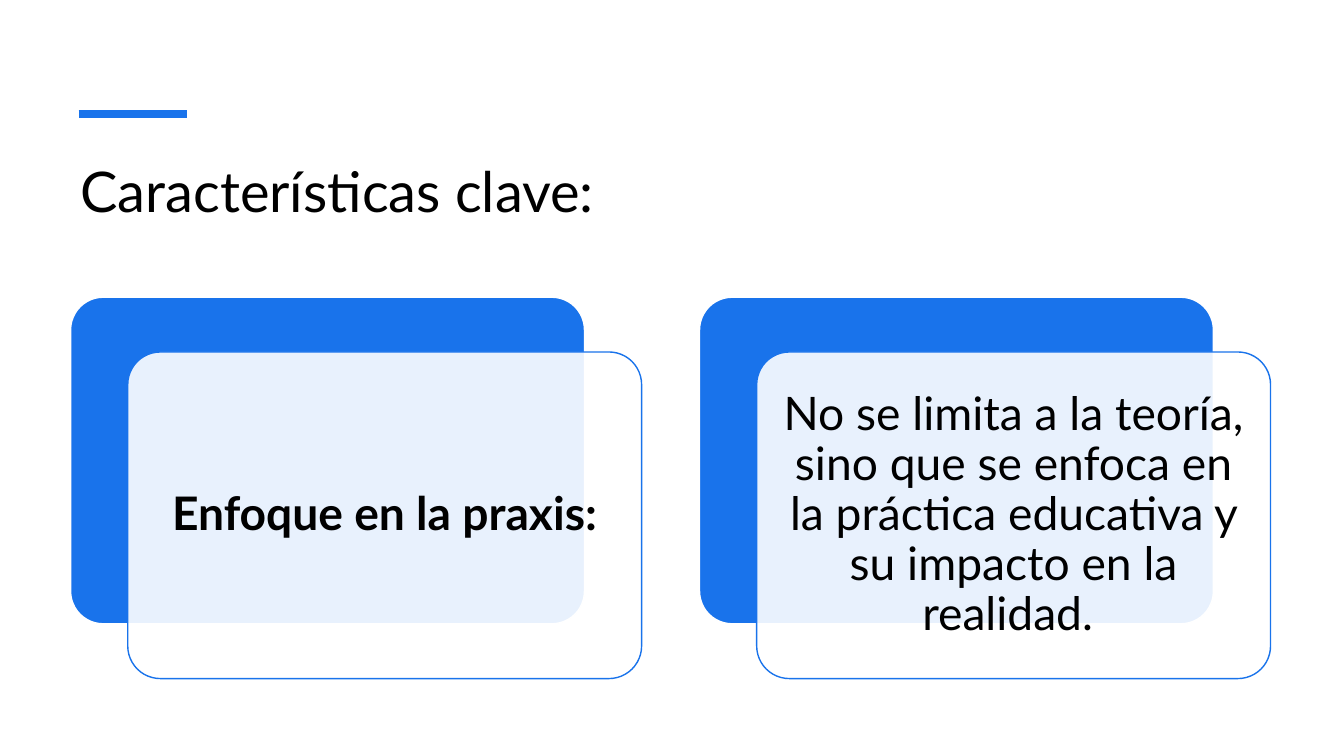
from dataclasses import dataclass

from lxml.etree import SubElement
from pptx import Presentation
from pptx.dml.color import RGBColor
from pptx.enum.shapes import MSO_CONNECTOR as Connector, MSO_SHAPE as Shape
from pptx.enum.text import MSO_ANCHOR as Anchor, PP_ALIGN as Align
from pptx.oxml.ns import qn
from pptx.util import Cm, Pt


@dataclass(frozen=True)
class Theme:
    font: str = "Lato"
    blue: RGBColor = RGBColor(0x19, 0x73, 0xEB)
    white: RGBColor = RGBColor(0xFF, 0xFF, 0xFF)
    black: RGBColor = RGBColor(0x00, 0x00, 0x00)
    title_size: int = 40
    card_size: int = 33
    outline: int = 1
    accent_line: int = 6


THEME = Theme()

CARDS = [
    ("Enfoque en la praxis:", True),
    ("No se limita a la teoría, sino que se enfoca en la práctica educativa y su impacto en la realidad. ", False),
]
CARD_LEFT, CARD_TOP, CARD_STEP = 1.78, 7.49, 15.85
CARD_WIDTH, CARD_HEIGHT = 12.95, 8.23
SHIFT_X, SHIFT_Y = 1.44, 1.38
TEXT_MARGIN = 0.24
TEXT_INSET = 0.36


def add_run(paragraph, text, size, bold=False):
    run = paragraph.add_run()
    run.text = text
    run.font.name = THEME.font
    run.font.size = Pt(size)
    run.font.bold = bold
    run.font.color.rgb = THEME.black


def add_text_box(shapes, left, top, width, height):
    box = shapes.add_textbox(Cm(left), Cm(top), Cm(width), Cm(height))
    box.text_frame.word_wrap = True
    return box.text_frame


def add_title(slide, text):
    frame = add_text_box(slide.shapes, 1.78, 3.81, 30.25, 3.05)
    add_run(frame.paragraphs[0], text, THEME.title_size)


def add_accent(slide):
    accent = slide.shapes.add_connector(
        Connector.STRAIGHT, Cm(1.98), Cm(2.87), Cm(4.7), Cm(2.87)
    )
    accent.line.color.rgb = THEME.blue
    accent.line.width = Pt(THEME.accent_line)
    SubElement(accent._element.spPr, qn("a:effectLst"))


def add_panel(shapes, left, top, fill, line, opacity=100):
    panel = shapes.add_shape(
        Shape.ROUNDED_RECTANGLE, Cm(left), Cm(top), Cm(CARD_WIDTH), Cm(CARD_HEIGHT)
    )
    panel.adjustments[0] = 0.1
    panel.shadow.inherit = False
    panel.fill.solid()
    panel.fill.fore_color.rgb = fill
    panel.line.color.rgb = line
    panel.line.width = Pt(THEME.outline)
    if opacity < 100:
        color = panel._element.spPr.find(qn("a:solidFill")).find(qn("a:srgbClr"))
        SubElement(color, qn("a:alpha"), val=str(opacity * 1000))


def add_card(shapes, left, text, bold):
    front_left, front_top = left + SHIFT_X, CARD_TOP + SHIFT_Y
    add_panel(shapes, left, CARD_TOP, THEME.blue, THEME.white)
    add_panel(shapes, front_left, front_top, THEME.white, THEME.blue, opacity=90)
    frame = add_text_box(
        shapes,
        front_left + TEXT_MARGIN,
        front_top + TEXT_MARGIN,
        CARD_WIDTH - 2 * TEXT_MARGIN,
        CARD_HEIGHT - 2 * TEXT_MARGIN,
    )
    frame.vertical_anchor = Anchor.MIDDLE
    frame.margin_left = frame.margin_right = Cm(TEXT_INSET)
    frame.margin_top = frame.margin_bottom = Cm(TEXT_INSET)
    paragraph = frame.paragraphs[0]
    paragraph.alignment = Align.CENTER
    paragraph.line_spacing = 0.9
    add_run(paragraph, text, THEME.card_size, bold)


def main():
    presentation = Presentation()
    presentation.slide_width = Cm(33.87)
    presentation.slide_height = Cm(19.05)
    slide = presentation.slides.add_slide(presentation.slide_layouts[6])
    slide.background.fill.solid()
    slide.background.fill.fore_color.rgb = THEME.white

    add_title(slide, "Características clave:")
    add_accent(slide)
    cards = slide.shapes.add_group_shape()
    for index, (text, bold) in enumerate(CARDS):
        add_card(cards.shapes, CARD_LEFT + index * CARD_STEP, text, bold)

    presentation.save("out.pptx")


if __name__ == "__main__":
    main()
